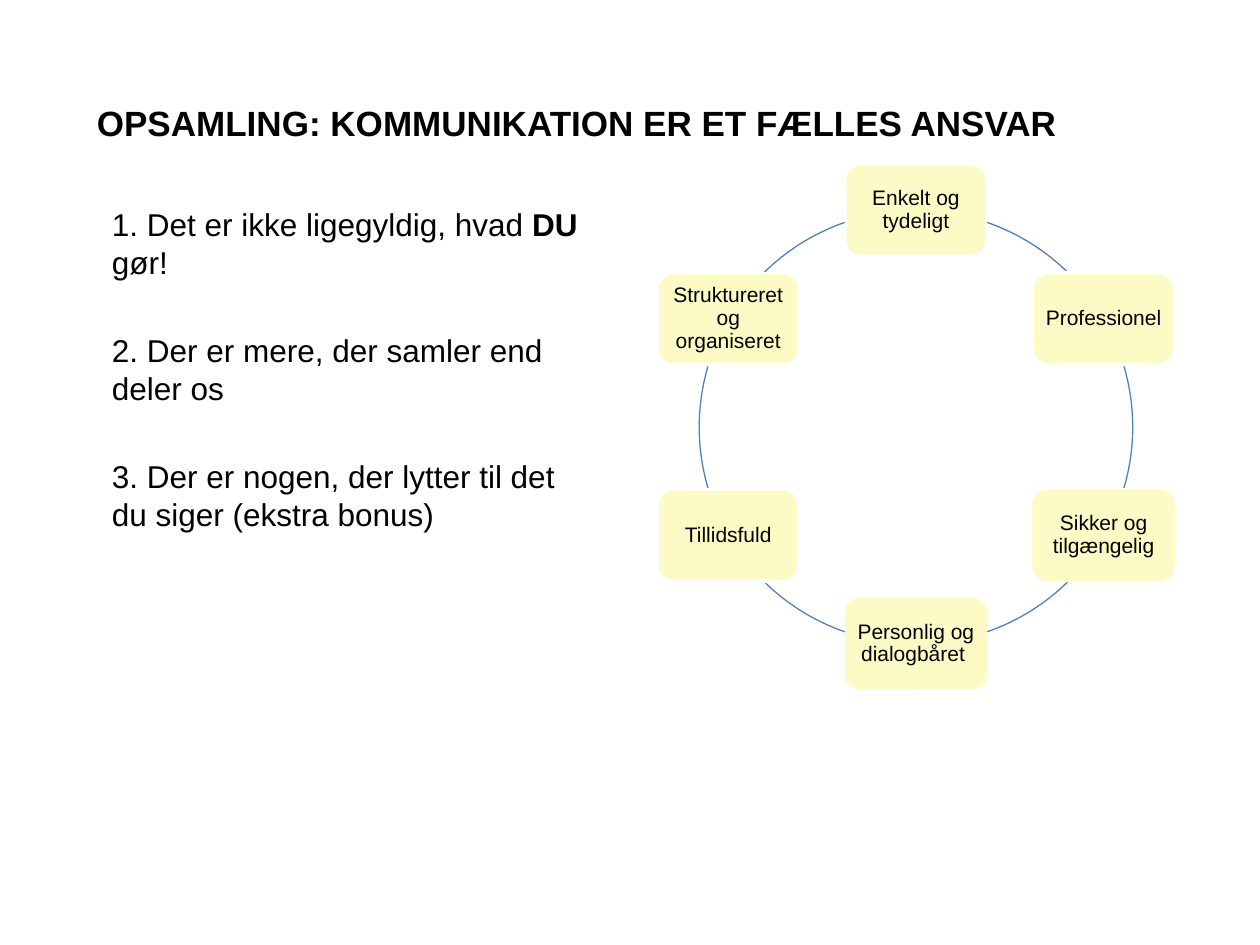
import math
from lxml import etree
from pptx import Presentation
from pptx import util as u
from pptx.dml.color import RGBColor
from pptx.enum import shapes, text
from pptx.oxml import ns

Inches, Pt = u.Inches, u.Pt


def colour(hex_value):
    return RGBColor.from_string(hex_value)


class SlideBuilder:
    font = "Arial"
    ink, box_fill, box_line, ring = "000000", "FCFBC5", "FFFFFF", "4F81BD"

    def __init__(self, slide):
        self.slide = slide

    def style_runs(self, paragraph, size, bold_words=()):
        for run in paragraph.runs:
            run.font.name = self.font
            run.font.size = Pt(size)
            run.font.color.rgb = colour(self.ink)
            run.font.bold = run.text in bold_words

    def text_area(self, left, top, width, height, inset_top, anchor):
        area = self.slide.shapes.add_textbox(
            Inches(left), Inches(top), Inches(width), Inches(height))
        frame = area.text_frame
        frame.word_wrap = True
        frame.margin_top = Inches(inset_top)
        frame.vertical_anchor = anchor
        return frame

    def title(self, wording):
        frame = self.text_area(0.67, 0.36, 8.11, 1.18, 0.09, text.MSO_ANCHOR.MIDDLE)
        frame.text = wording
        self.style_runs(frame.paragraphs[0], 20, [wording])

    def points(self, items):
        frame = self.text_area(0.79, 1.23, 3.94, 4.02, 0.4, text.MSO_ANCHOR.TOP)
        for index, pieces in enumerate(items):
            point = frame.add_paragraph() if index else frame.paragraphs[0]
            point.line_spacing = Pt(21.6)
            if index:
                point.space_before = Pt(28.8)
            for piece in pieces:
                point.add_run().text = piece
            self.style_runs(point, 18, ["DU"])

    def box(self, centre_x, centre_y, wording, outlined):
        width, height = 1.13, 0.73
        box = self.slide.shapes.add_shape(
            shapes.MSO_SHAPE.ROUNDED_RECTANGLE,
            Inches(centre_x - width / 2), Inches(centre_y - height / 2),
            Inches(width), Inches(height))
        box.shadow.inherit = False
        box.fill.solid()
        box.fill.fore_color.rgb = colour(self.box_fill)
        if outlined:
            box.line.color.rgb = colour(self.box_line)
            box.line.width = Pt(2)
        else:
            box.line.fill.background()
        frame = box.text_frame
        frame.word_wrap = True
        frame.margin_left = frame.margin_right = Inches(0.05)
        frame.margin_top = frame.margin_bottom = Inches(0.05)
        frame.vertical_anchor = text.MSO_ANCHOR.MIDDLE
        frame.text = wording
        label = frame.paragraphs[0]
        label.alignment = text.PP_ALIGN.CENTER
        label.line_spacing = 0.9
        self.style_runs(label, 12)

    def arc(self, centre_x, centre_y, radius, start, end):
        arc = self.slide.shapes.add_shape(
            shapes.MSO_SHAPE.ARC,
            Inches(centre_x - radius), Inches(centre_y - radius),
            Inches(2 * radius), Inches(2 * radius))
        arc.shadow.inherit = False
        arc.adjustments[0] = start % 360 * 0.6
        arc.adjustments[1] = end % 360 * 0.6
        arc.fill.background()
        arc.line.color.rgb = colour(self.ring)
        arc.line.width = Pt(0.75)

    def cycle(self, centre_x, centre_y, radius, qualities, arcs):
        step = 360 / len(qualities)
        for index, ((wording, outlined), (start, end)) in enumerate(zip(qualities, arcs)):
            angle = math.radians(index * step - 90)
            self.box(centre_x + radius * math.cos(angle),
                     centre_y + radius * math.sin(angle), wording, outlined)
            self.arc(centre_x, centre_y, radius, start, end)


def main():
    deck = Presentation()
    deck.slide_width, deck.slide_height = Inches(10), Inches(7.5)
    builder = SlideBuilder(deck.slides.add_slide(deck.slide_layouts[6]))
    builder.points([
        ["1. Det er ikke ligegyldig, hvad ", "DU", " gør!"],
        ["2. Der er mere, der samler end deler os"],
        ["3. Der er nogen, der lytter til det du siger (ekstra bonus)"],
    ])
    builder.title("OPSAMLING: KOMMUNIKATION ER ET FÆLLES ANSVAR")
    qualities = [
        ("Enkelt og tydeligt", True),
        ("Professionel", True),
        ("Sikker og tilgængelig", False),
        ("Personlig og dialogbåret ", False),
        ("Tillidsfuld", True),
        ("Struktureret og organiseret", True),
    ]
    right_arcs = [(-70.8, -45.7), (-16.3, 16.3), (45.7, 70.8)]
    left_arcs = [(start + 180, end + 180) for start, end in right_arcs]
    builder.cycle(7.27, 3.39, 1.72, qualities, right_arcs + left_arcs)
    deck.save("out.pptx")


if __name__ == "__main__":
    main()
